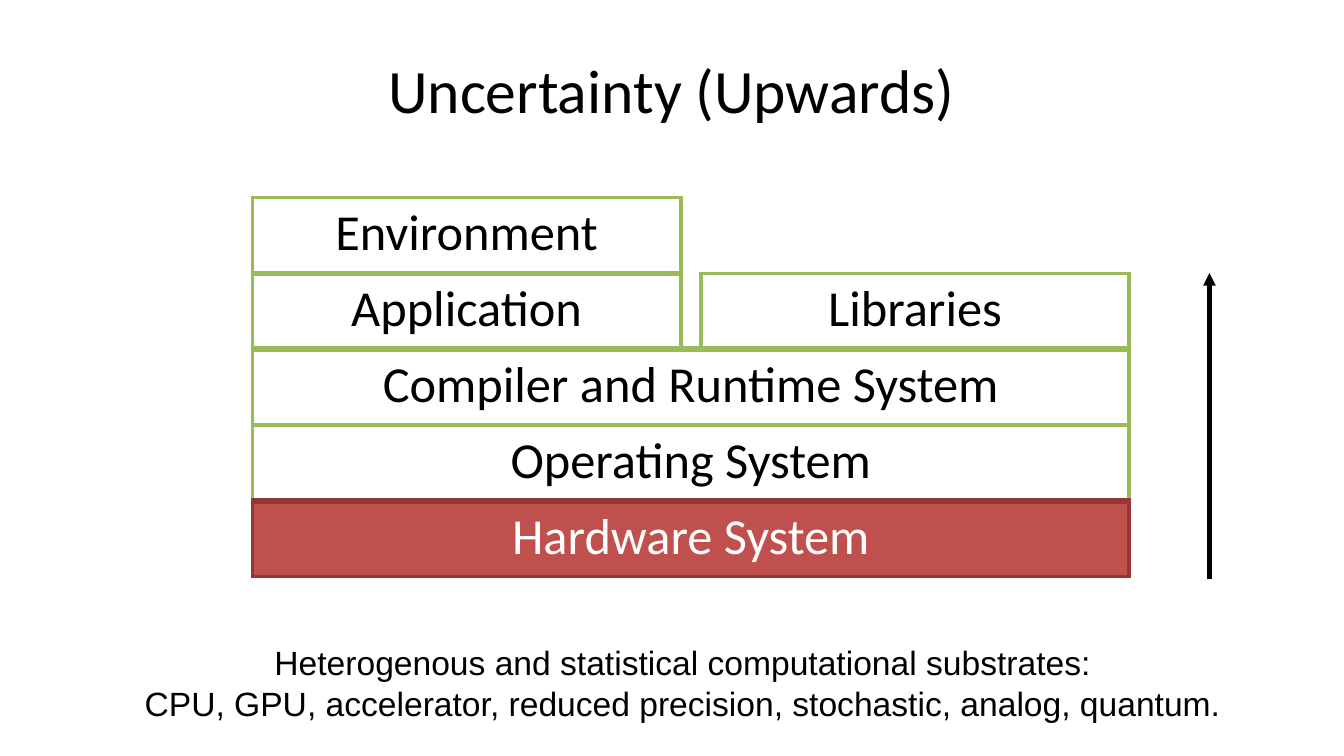
from pptx import Presentation
from pptx.dml.color import RGBColor
from pptx.enum.shapes import MSO_CONNECTOR as Link
from pptx.enum.text import MSO_ANCHOR as Anchor, MSO_AUTO_SIZE as Fit, PP_ALIGN as Align
from pptx.oxml.ns import qn
from pptx.util import Cm, Pt
from lxml.etree import SubElement as Sub

GREEN, MAROON, RED, BLACK, WHITE = "9BBB59", "953735", "C0504D", "000000", "FFFFFF"
THIN, THICK = 3, 4.5


def paint(target, tone):
    target.rgb = RGBColor.from_string(tone)


class Deck:
    head = "Calibri"
    note = "Arial"

    def __init__(self):
        self.prs = Presentation()
        self.prs.slide_width, self.prs.slide_height = Cm(33.87), Cm(19.05)
        self.slide = self.prs.slides.add_slide(self.prs.slide_layouts[5])

    def label(self, frame, text, font, size, gap, tone=BLACK):
        frame.text = text
        for para in frame.paragraphs:
            para.alignment = Align.CENTER
            para.space_before = Pt(gap)
            for run in para.runs:
                run.font.name, run.font.size = font, Pt(size)
                paint(run.font.color, tone)

    def setup(self, frame, top):
        frame.word_wrap = True
        frame.auto_size = Fit.NONE
        frame.vertical_anchor = Anchor.TOP
        frame.margin_left = frame.margin_right = frame.margin_bottom = 0
        frame.margin_top = Cm(top)

    def title(self, text, x, y, w, h):
        shape = self.slide.shapes.title
        shape.left, shape.top, shape.width, shape.height = Cm(x), Cm(y), Cm(w), Cm(h)
        self.setup(shape.text_frame, 0.41)
        self.label(shape.text_frame, text, self.head, 44, 1)

    def text(self, text, x, y, w, h):
        box = self.slide.shapes.add_textbox(Cm(x), Cm(y), Cm(w), Cm(h))
        self.setup(box.text_frame, 0.03)
        self.label(box.text_frame, text, self.note, 24, 0.5)

    def grid(self, x, y, cols, count, high):
        frame = self.slide.shapes.add_table(
            count, len(cols), Cm(x), Cm(y), Cm(sum(cols)), Cm(count * high))
        table = frame.table
        table.first_row = table.horz_banding = False
        for col, wide in zip(table.columns, cols):
            col.width = Cm(wide)
        for row in table.rows:
            row.height = Cm(high)
        for cell in table.iter_cells():
            cell.fill.background()
        return table

    def edge(self, cell, sides):
        props = cell._tc.get_or_add_tcPr()
        for spot, side in enumerate("LRTB"):
            tone, width = sides.get(side, (None, 0))
            line = Sub(props, qn(f"a:ln{side}"), w=str(Pt(width)))
            props.insert(spot, line)
            if tone:
                fill = Sub(line, qn("a:solidFill"))
                Sub(fill, qn("a:srgbClr"), val=tone)
            else:
                Sub(line, qn("a:noFill"))

    def cell(self, table, row, col, span, text, sides, fill=None, tone=BLACK):
        cell = table.cell(row, col)
        if span > 1:
            cell.merge(table.cell(row, col + span - 1))
        cell.margin_left = cell.margin_right = cell.margin_bottom = 0
        cell.margin_top = Cm(0.13)
        cell.vertical_anchor = Anchor.TOP
        if text:
            self.label(cell.text_frame, text, self.head, 36, 3.5, tone)
        self.edge(cell, sides)
        if fill:
            cell.fill.solid()
            paint(cell.fill.fore_color, fill)

    def arrow(self, x, start, end):
        link = self.slide.shapes.add_connector(
            Link.STRAIGHT, Cm(x), Cm(start), Cm(x), Cm(end))
        link.line.width = Pt(3)
        link.line.fill.solid()
        paint(link.line.fill.fore_color, BLACK)
        props = link._element.spPr
        Sub(props.find(qn("a:ln")), qn("a:tailEnd"), type="triangle")
        Sub(props, qn("a:effectLst"))


def frame(top=THIN, base=THIN, tone=GREEN, floor=None):
    return {"L": (tone, THIN), "R": (tone, THIN),
            "T": (tone, top), "B": (floor or tone, base)}


def main():
    deck = Deck()
    deck.title("Uncertainty (Upwards)", 1.45, 0.91, 30.96, 2.79)

    stack = deck.grid(6.36, 4.98, [10.8, 0.5, 10.8], 5, 1.91)
    gap = frame()
    del gap["T"]
    layers = [
        (0, 0, 1, "Environment", frame(base=THICK)),
        (0, 1, 2, "", {"L": (GREEN, THIN)}),
        (1, 0, 1, "Application", frame(THICK, THICK)),
        (1, 1, 1, "", gap),
        (1, 2, 1, "Libraries", frame(base=THICK)),
        (2, 0, 3, "Compiler and Runtime System", frame(THICK)),
        (3, 0, 3, "Operating System", frame(base=THICK, floor=MAROON)),
        (4, 0, 3, "Hardware System", frame(THICK, tone=MAROON), RED, WHITE),
    ]
    for layer in layers:
        deck.cell(stack, *layer)

    deck.arrow(30.48, 14.6, 6.88)
    deck.text("Heterogenous and statistical computational substrates:\n"
              "CPU, GPU, accelerator, reduced precision, stochastic, analog, quantum.",
              3.4, 16.15, 27.6, 2.11)
    deck.prs.save("out.pptx")


if __name__ == "__main__":
    main()
